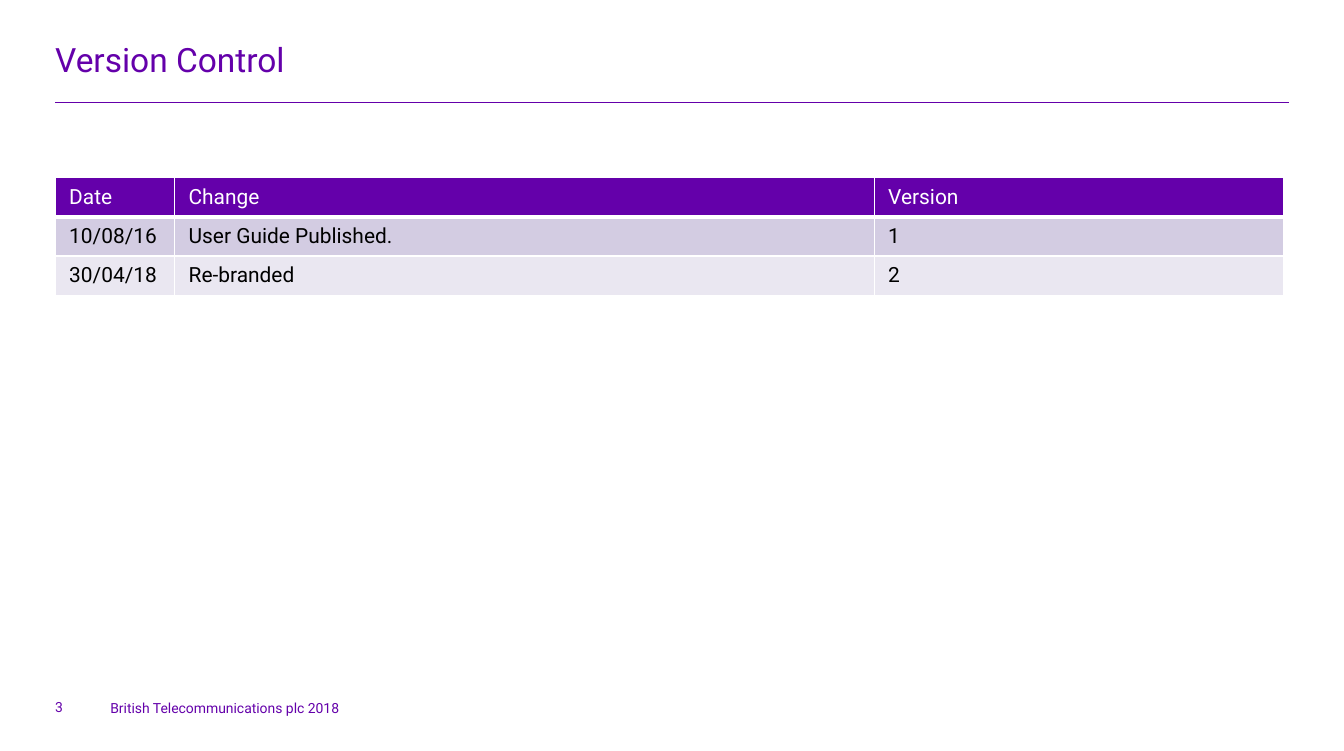
from lxml.etree import SubElement
from pptx import Presentation
from pptx.dml.color import RGBColor
from pptx.enum.text import MSO_ANCHOR
from pptx.oxml.ns import qn
from pptx.util import Inches, Pt

TITLE = "Version Control"
PAGE = "3"
FOOTER = "British Telecommunications plc 2018"
ROWS = [
    ("Date", "Change", "Version"),
    ("10/08/16", "User Guide Published.", "1"),
    ("30/04/18", "Re-branded", "2"),
]
COLORS = {"purple": "6400AA", "white": "FFFFFF", "black": "000000",
          "odd": "D3CCE2", "even": "EAE7F1"}
FONT = "Roboto"
WIDTH, HEIGHT = 13.39, 7.48
LEFT = 0.55
CONTENT_W = WIDTH - 2 * LEFT
COL_WIDTHS = (1.19, 6.97, 4.08)
ROW_H = 0.39
TABLE_TOP = 1.77
RULE_Y = 1.02


def rgb(name):
    return RGBColor.from_string(COLORS[name])


def write(tf, text, size=10, color="purple", anchor=MSO_ANCHOR.BOTTOM, inset=(0, 0)):
    tf.word_wrap = True
    tf.vertical_anchor = anchor
    tf.margin_left = tf.margin_right = Inches(inset[0])
    tf.margin_top = tf.margin_bottom = Inches(inset[1])
    write_run(tf.paragraphs[0], text, size, color)


def write_run(p, text, size, color):
    r = p.add_run()
    r.text = text
    r.font.name = FONT
    r.font.size = Pt(size)
    r.font.color.rgb = rgb(color)


def set_borders(cell, widths):
    tc_pr = cell._tc.get_or_add_tcPr()
    for i, (side, width) in enumerate(widths.items()):
        ln = tc_pr.makeelement(qn(f"a:ln{side}"), {"w": str(Pt(width))})
        fill = SubElement(ln, qn("a:solidFill"))
        SubElement(fill, qn("a:srgbClr"), val=COLORS["white"])
        tc_pr.insert(i, ln)


def add_rule(s):
    line = s.shapes.add_connector(1, Inches(LEFT), Inches(RULE_Y),
                                  Inches(LEFT + CONTENT_W), Inches(RULE_Y))
    line.line.color.rgb = rgb("purple")
    line.line.width = Pt(0.25)
    SubElement(line._element.spPr, qn("a:effectLst"))


def add_text(s, text, box):
    sp = s.shapes.add_textbox(*map(Inches, box))
    write(sp.text_frame, text)


def add_versions(s):
    table = s.shapes.add_table(len(ROWS), len(COL_WIDTHS), Inches(LEFT), Inches(TABLE_TOP),
                               Inches(sum(COL_WIDTHS)), Inches(ROW_H * len(ROWS))).table
    for col, width in zip(table.columns, COL_WIDTHS):
        col.width = Inches(width)
    for i, values in enumerate(ROWS):
        table.rows[i].height = Inches(ROW_H)
        fill = "purple" if i == 0 else "odd" if i % 2 else "even"
        widths = {"L": 1, "R": 1, "T": 3 if i == 1 else 1, "B": 3 if i == 0 else 1}
        for j, text in enumerate(values):
            cell = table.cell(i, j)
            cell.fill.solid()
            cell.fill.fore_color.rgb = rgb(fill)
            cell.vertical_anchor = MSO_ANCHOR.TOP
            cell.margin_left = cell.margin_right = Inches(0.14)
            cell.margin_top = cell.margin_bottom = Inches(0.07)
            write_run(cell.text_frame.paragraphs[0], text, 15,
                      "black" if i else "white")
            set_borders(cell, widths)


def main():
    prs = Presentation()
    prs.slide_width, prs.slide_height = Inches(WIDTH), Inches(HEIGHT)
    s = prs.slides.add_slide(prs.slide_layouts[5])
    add_rule(s)
    title = s.shapes.title
    title.left, title.top = Inches(LEFT), Inches(0.35)
    title.width, title.height = Inches(CONTENT_W), Inches(0.47)
    write(title.text_frame, TITLE, size=24, anchor=MSO_ANCHOR.MIDDLE)
    title.text_frame.paragraphs[0].alignment = 1
    add_text(s, FOOTER, (2 * LEFT, 6.84, 2.36, 0.29))
    add_text(s, PAGE, (LEFT, 6.81, 0.39, 0.31))
    add_versions(s)
    prs.save("out.pptx")


if __name__ == "__main__":
    main()
